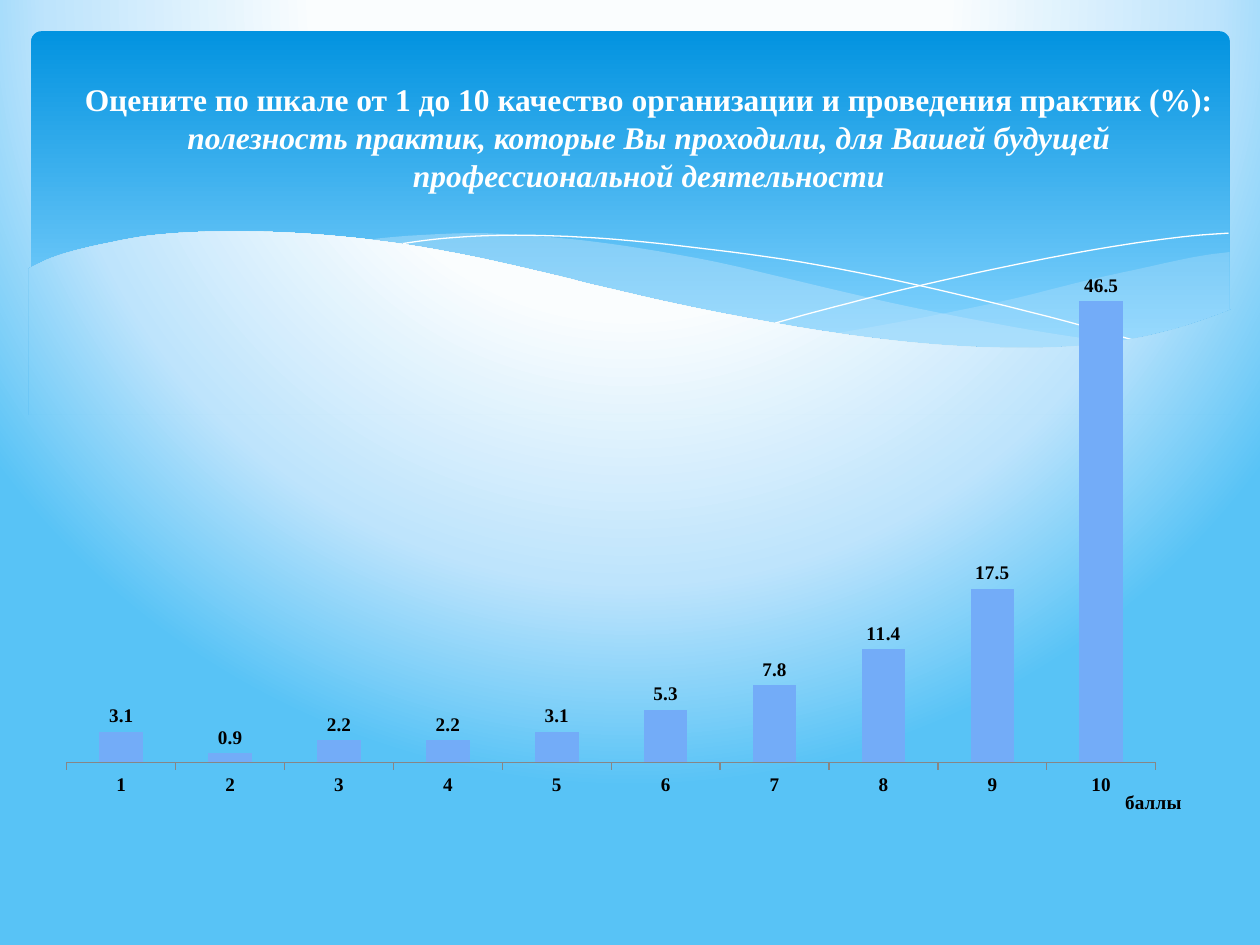
"""Build the slide that rates how useful the practices were."""

from dataclasses import dataclass
from typing import Optional

from pptx import Presentation
from pptx.chart.data import CategoryChartData
from pptx.dml.color import RGBColor
from pptx.enum.chart import XL_CHART_TYPE, XL_LABEL_POSITION, XL_TICK_MARK
from pptx.enum.shapes import MSO_SHAPE
from pptx.enum.text import MSO_ANCHOR, MSO_AUTO_SIZE, PP_ALIGN
from pptx.oxml import parse_xml
from pptx.oxml.ns import nsdecls, qn
from pptx.oxml.xmlchemy import OxmlElement
from pptx.util import Cm, Pt

Points = list[tuple[float, float]]


@dataclass(frozen=True)
class Theme:
    heading_font: str = "Times New Roman"
    chart_font: str = "Cabin"
    white: str = "FFFFFF"
    black: str = "000000"
    axis: str = "868686"
    bar: str = "73ACF8"
    fold: str = "C6E7FC"
    panel_top: str = "0293E0"
    panel_bottom: str = "83D3FE"
    glow: tuple = ((40, "FAFDFE"), (74, "BEE4FC"), (100, "58C3F6"))
    heading_size: float = 18
    label_size: float = 11
    chart_size: float = 10


@dataclass(frozen=True)
class Curve:
    knots: Points
    lower_knots: Optional[Points] = None
    opacity: int = 100


THEME = Theme()
SCORES = [3.1, 0.9, 2.2, 2.2, 3.1, 5.3, 7.8, 11.4, 17.5, 46.5]
CURVES = [
    Curve(
        [(976, 200), (948, 204), (906, 213), (861, 223), (805, 237), (753, 248), (706, 257), (661, 265)],
        [(661, 265), (705, 271), (745, 275), (792, 277), (835, 277), (881, 273), (921, 265), (949, 257),
         (976, 247)],
        29,
    ),
    Curve(
        [(893, 273), (837, 265), (775, 254), (706, 240), (629, 222), (569, 208), (514, 198), (465, 191),
         (420, 187), (380, 185), (344, 186), (313, 188), (286, 191)],
        [(286, 191), (342, 199), (404, 211), (449, 222), (530, 240), (601, 255), (665, 266), (722, 274),
         (773, 277), (828, 278), (876, 275), (893, 273)],
        40,
    ),
    Curve([(309, 195), (344, 190), (387, 187), (433, 187), (489, 190), (556, 197), (636, 208), (727, 226),
           (831, 251), (907, 272)]),
    Curve([(613, 257), (653, 246), (720, 229), (806, 210), (881, 196), (938, 188), (975, 185)]),
]
WAVE_CREST = [
    (977, 246), (940, 259), (899, 269), (850, 275), (793, 276), (726, 272), (648, 262), (555, 245),
    (475, 227), (447, 220), (391, 207), (340, 197), (292, 190), (250, 186), (211, 184), (161, 184),
    (119, 187), (85, 193), (59, 199), (40, 205), (23, 213),
]
WAVE_BASE = [(23, 329), (977, 329)]


def smooth(knots: Points, steps: int = 6) -> Points:
    """Run a Catmull-Rom curve through the knots."""
    padded = [knots[0], *knots, knots[-1]]
    curve = [knots[0]]
    for a, b, c, d in zip(padded, padded[1:], padded[2:], padded[3:]):
        for step in range(1, steps + 1):
            t = step / steps
            curve.append(tuple(
                0.5 * (2 * q + (r - p) * t + (2 * p - 5 * q + 4 * r - s) * t**2 + (3 * q - p - 3 * r + s) * t**3)
                for p, q, r, s in zip(a, b, c, d)
            ))
    return curve


def draw_outline(slide, points: Points, closed: bool):
    """Draw a freeform from points in hundredths of an inch."""
    fine = [(x * 10, y * 10) for x, y in points]
    builder = slide.shapes.build_freeform(*fine[0], scale=Cm(2.54) / 1000)
    builder.add_line_segments(fine[1:], close=closed)
    outline = builder.convert_to_shape()
    outline.shadow.inherit = False
    return outline


def draw_curve(slide, curve: Curve) -> None:
    """Draw a translucent fold or a thin white line."""
    points = smooth(curve.knots)
    if curve.lower_knots is None:
        strand = draw_outline(slide, points, False)
        strand.fill.background()
        strand.line.color.rgb = RGBColor.from_string(THEME.white)
        strand.line.width = Pt(0)
        return
    fold = draw_outline(slide, points + smooth(curve.lower_knots)[1:], True)
    fold.fill.solid()
    fold.fill.fore_color.rgb = RGBColor.from_string(THEME.fold)
    fold.line.fill.background()
    alpha = OxmlElement("a:alpha")
    alpha.set("val", str(curve.opacity * 1000))
    fold.element.find(f".//{qn('a:srgbClr')}").append(alpha)


def draw_wave(slide) -> None:
    """Cut the panel's lower edge with a wave that shows the background."""
    wave = draw_outline(slide, smooth(WAVE_CREST) + WAVE_BASE, True)
    wave.element.remove(wave.element.find(qn("p:style")))
    wave.element.set("useBgFill", "1")
    wave.line.fill.background()


def draw_panel(slide) -> None:
    """Draw the blue gradient panel behind the title."""
    panel = slide.shapes.add_shape(MSO_SHAPE.ROUNDED_RECTANGLE, Cm(0.63), Cm(0.63), Cm(24.16), Cm(6.86))
    panel.adjustments[0] = 0.03
    panel.shadow.inherit = False
    panel.line.fill.background()
    panel.fill.gradient()
    panel.fill.gradient_angle = 270
    stops = zip(panel.fill.gradient_stops, (0, 0.9), (THEME.panel_top, THEME.panel_bottom))
    for stop, position, color in stops:
        stop.position = position
        stop.color.rgb = RGBColor.from_string(color)


def paint_background(slide) -> None:
    """Fill the background with a radial glow."""
    slide.background.fill.solid()
    plain = slide.element.find(f".//{qn('p:bgPr')}/{qn('a:solidFill')}")
    stops = "".join(
        f'<a:gs pos="{position * 1000}"><a:srgbClr val="{color}"/></a:gs>' for position, color in THEME.glow
    )
    plain.getparent().replace(plain, parse_xml(
        f'<a:gradFill {nsdecls("a")} rotWithShape="1"><a:gsLst>{stops}</a:gsLst><a:path path="circle">'
        '<a:fillToRect l="20000" t="-40000" r="20000" b="140000"/></a:path></a:gradFill>'
    ))


def style_font(font, *, size: float, color: str = THEME.black, name: str = THEME.heading_font,
               bold: bool = True, italic: bool = False) -> None:
    """Set a font's face, size, colour and emphasis."""
    font.name, font.size, font.bold, font.italic = name, Pt(size), bold, italic
    font.color.rgb = RGBColor.from_string(color)


def write_text(paragraph, text: str, **style) -> None:
    """Add a formatted run to a paragraph."""
    run = paragraph.add_run()
    run.text = text
    style_font(run.font, **style)


def write_heading(slide) -> None:
    """Place the title above the panel and write it."""
    heading = slide.shapes.title
    heading.element.getparent().append(heading.element)
    heading.left, heading.top, heading.width, heading.height = Cm(1.27), Cm(1.02), Cm(23.62), Cm(3.48)
    frame = heading.text_frame
    frame.word_wrap, frame.auto_size, frame.vertical_anchor = True, MSO_AUTO_SIZE.NONE, MSO_ANCHOR.MIDDLE
    question = frame.paragraphs[0]
    question.alignment = PP_ALIGN.CENTER
    style = dict(size=THEME.heading_size, color=THEME.white)
    write_text(question, "Оцените по шкале от 1 до 10 качество организации и проведения практик (%):", **style)
    question.add_line_break()
    write_text(question, "полезность практик, которые Вы проходили, для Вашей будущей профессиональной деятельности",
               italic=True, **style)


def fix_layout(part, index: int, target: str = "", **box: float) -> None:
    """Give a chart part a manual layout in fractions of the chart."""
    for layout in part.findall(qn("c:layout")):
        part.remove(layout)
    inner = f'<c:layoutTarget val="{target}"/>' if target else ""
    modes = '<c:xMode val="edge"/><c:yMode val="edge"/>'
    sizes = "".join(f'<c:{side} val="{value}"/>' for side, value in box.items())
    part.insert(index, parse_xml(
        f'<c:layout {nsdecls("c")}><c:manualLayout>{inner}{modes}{sizes}</c:manualLayout></c:layout>'
    ))


def add_scores(slide) -> None:
    """Chart the share of answers for each score."""
    data = CategoryChartData(number_format="0.0")
    data.categories = [str(score) for score in range(1, len(SCORES) + 1)]
    data.add_series("Series 1", SCORES)
    chart = slide.shapes.add_chart(
        XL_CHART_TYPE.COLUMN_CLUSTERED, Cm(0.89), Cm(5.13), Cm(23.01), Cm(12.19), data
    ).chart
    chart.has_legend = chart.has_title = False
    style_font(chart.font, size=THEME.chart_size, name=THEME.chart_font, bold=False)

    plot = chart.plots[0]
    plot.gap_width, plot.vary_by_categories, plot.has_data_labels = 150, False, True
    bars = plot.series[0].format.fill
    bars.solid()
    bars.fore_color.rgb = RGBColor.from_string(THEME.bar)
    labels = plot.data_labels
    labels.show_value, labels.position = True, XL_LABEL_POSITION.OUTSIDE_END
    style_font(labels.font, size=THEME.label_size)

    shares = chart.value_axis
    shares.visible = shares.has_major_gridlines = False
    shares.minimum_scale, shares.maximum_scale = 0, 50
    points = chart.category_axis
    points.major_tick_mark = XL_TICK_MARK.OUTSIDE
    points.format.line.color.rgb = RGBColor.from_string(THEME.axis)
    style_font(points.tick_labels.font, size=THEME.label_size)
    write_text(points.axis_title.text_frame.paragraphs[0], "баллы", size=THEME.label_size)
    fix_layout(chart.element.find(f".//{qn('c:title')}"), 1, x=0.95, y=0.88)
    fix_layout(chart.element.find(f".//{qn('c:plotArea')}"), 0, "inner", x=0.02, y=0.02, w=0.96, h=0.82)


def main() -> None:
    """Assemble and save the slide."""
    deck = Presentation()
    deck.slide_width, deck.slide_height = Cm(25.4), Cm(19.05)
    slide = deck.slides.add_slide(deck.slide_layouts[5])
    paint_background(slide)
    draw_panel(slide)
    for curve in CURVES:
        draw_curve(slide, curve)
    draw_wave(slide)
    write_heading(slide)
    add_scores(slide)
    deck.save("out.pptx")


if __name__ == "__main__":
    main()
